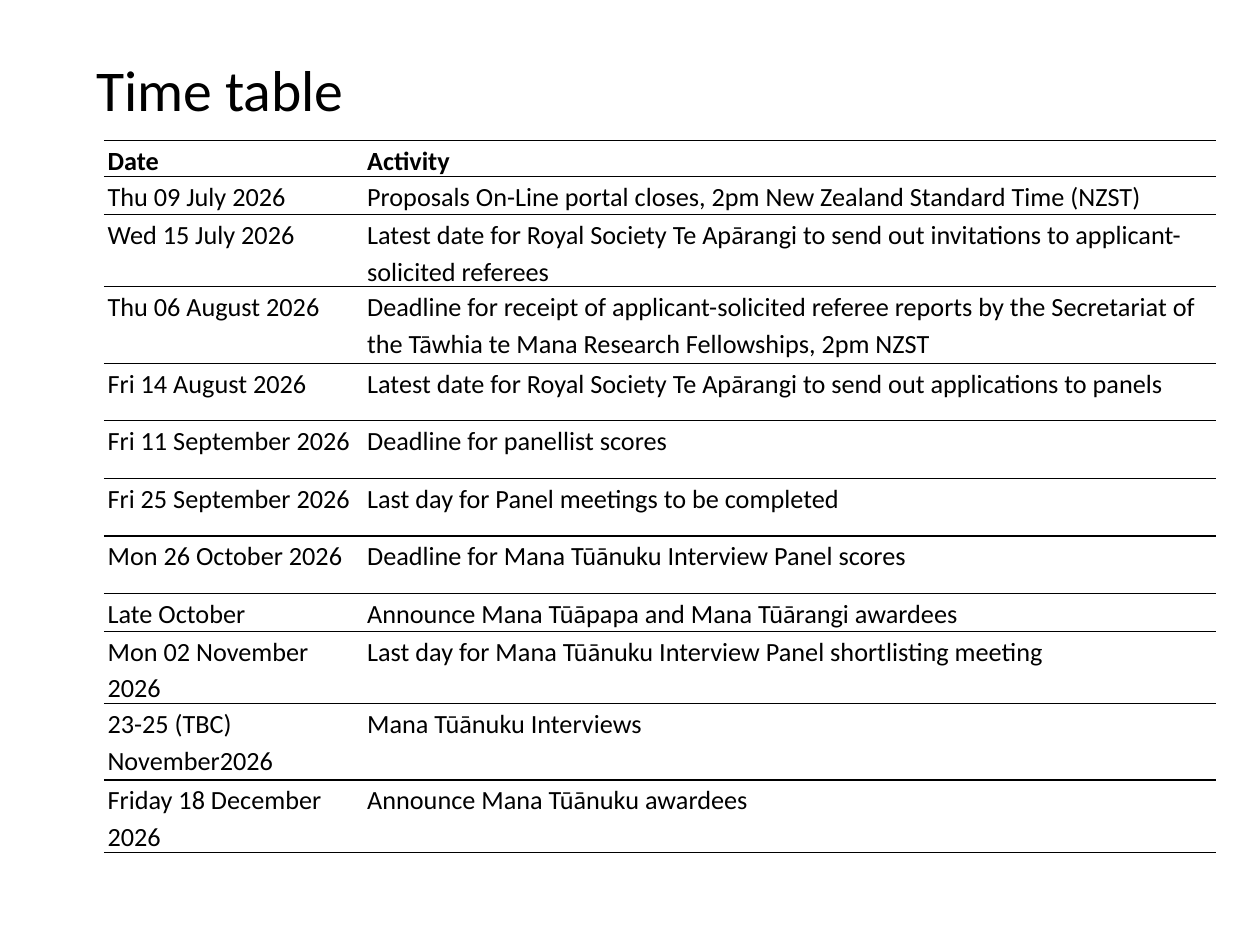
from dataclasses import dataclass

from lxml.etree import SubElement
from pptx import Presentation
from pptx.dml.color import RGBColor as RGB
from pptx.enum.text import MSO_ANCHOR as Anchor
from pptx.oxml.ns import qn
from pptx.util import Inches, Pt


@dataclass(frozen=True)
class Theme:
    font: str = "Calibri"
    ink: str = "000000"
    title_size: int = 44
    table_size: int = 20
    rule_width: int = 1


@dataclass(frozen=True)
class Entry:
    date: str
    activity: str
    height: float = 0.61


THEME = Theme()
COLUMN_WIDTHS = (2.75, 9.03)
ENTRIES = (
    Entry("Date", "Activity", 0.19),
    Entry("Thu 09 July 2026",
          "Proposals On-Line portal closes, 2pm New Zealand Standard Time (NZST)", 0.4),
    Entry("Wed 15 July 2026",
          "Latest date for Royal Society Te Apārangi to send out invitations "
          "to applicant-solicited referees"),
    Entry("Thu 06 August 2026",
          "Deadline for receipt of applicant-solicited referee reports by the Secretariat "
          "of the Tāwhia te Mana Research Fellowships, 2pm NZST", 0.81),
    Entry("Fri 14 August 2026",
          "Latest date for Royal Society Te Apārangi to send out applications to panels"),
    Entry("Fri 11 September 2026", "Deadline for panellist scores"),
    Entry("Fri 25 September 2026", "Last day for Panel meetings to be completed"),
    Entry("Mon 26 October 2026", "Deadline for Mana Tūānuku Interview Panel scores"),
    Entry("Late October", "Announce Mana Tūāpapa and Mana Tūārangi awardees", 0.4),
    Entry("Mon 02 November 2026",
          "Last day for Mana Tūānuku Interview Panel shortlisting meeting"),
    Entry("23-25 (TBC) November2026", "Mana Tūānuku Interviews", 0.81),
    Entry("Friday 18 December 2026", "Announce Mana Tūānuku awardees"),
)


def write(tf, text: str, size: int, spacing: float, bold: bool = False) -> None:
    """Fill a text frame with one styled paragraph."""
    tf.word_wrap = True
    p = tf.paragraphs[0]
    p.text = text
    p.line_spacing = spacing
    p.font.name = THEME.font
    p.font.size = Pt(size)
    p.font.bold = bold
    p.font.color.rgb = RGB.from_string(THEME.ink)


def rule_cell(cell) -> None:
    """Draw rules above and below a cell, and none at its sides."""
    tc_pr = cell._tc.get_or_add_tcPr()
    for side in ("lnL", "lnR", "lnT", "lnB"):
        ln = SubElement(tc_pr, qn(f"a:{side}"), w=str(Pt(THEME.rule_width)))
        if side in ("lnT", "lnB"):
            fill = SubElement(ln, qn("a:solidFill"))
            SubElement(fill, qn("a:srgbClr"), val=THEME.ink)
        else:
            SubElement(ln, qn("a:noFill"))


def add_title(slide, text: str) -> None:
    box = slide.shapes.add_textbox(Inches(0.92), Inches(0.01), Inches(11.51), Inches(1.95))
    box.text_frame.vertical_anchor = Anchor.MIDDLE
    write(box.text_frame, text, THEME.title_size, 0.9)


def add_timetable(slide, entries: tuple[Entry, ...]) -> None:
    table = slide.shapes.add_table(
        len(entries), len(COLUMN_WIDTHS), Inches(1.1), Inches(1.49),
        Inches(sum(COLUMN_WIDTHS)), Inches(sum(e.height for e in entries))).table
    table.first_row = table.horz_banding = False
    for column, width in zip(table.columns, COLUMN_WIDTHS):
        column.width = Inches(width)
    for i, (row, entry) in enumerate(zip(table.rows, entries)):
        row.height = Inches(entry.height)
        for cell, text in zip(row.cells, (entry.date, entry.activity)):
            cell.margin_left = cell.margin_right = Inches(0.04)
            cell.margin_top = cell.margin_bottom = 0
            rule_cell(cell)
            cell.fill.background()
            write(cell.text_frame, text, THEME.table_size, 1.15, bold=i == 0)


def main() -> None:
    prs = Presentation()
    prs.slide_width, prs.slide_height = Inches(13.35), Inches(10.08)
    slide = prs.slides.add_slide(prs.slide_layouts[6])

    # Heading
    add_title(slide, "Time table")

    # Dates and activities
    add_timetable(slide, ENTRIES)

    prs.save("out.pptx")


if __name__ == "__main__":
    main()
